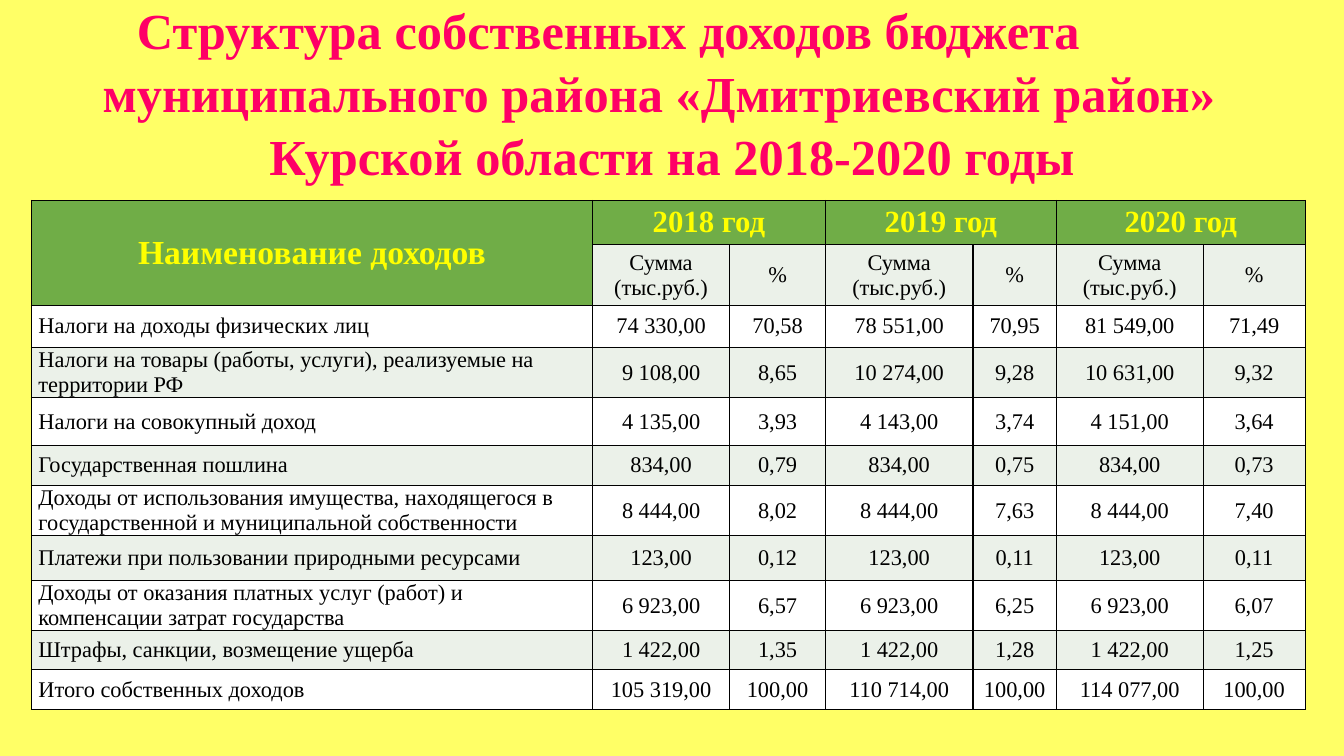
"""Build the slide with the own-revenue structure of the district budget."""
import lxml.etree
import pptx
import pptx.dml.color
import pptx.enum.text
import pptx.oxml
import pptx.oxml.ns
import pptx.util
from pptx.util import Cm

RGBColor = pptx.dml.color.RGBColor
BACKGROUND = RGBColor(0xFF, 0xFF, 0x66)
TITLE_PINK = RGBColor(0xFF, 0x00, 0x66)
HEADER_GREEN = RGBColor(0x70, 0xAD, 0x47)
HEADER_YELLOW = RGBColor(0xFF, 0xFF, 0x00)
BAND = RGBColor(0xEB, 0xF1, 0xE9)
WHITE = RGBColor(0xFF, 0xFF, 0xFF)
BLACK = RGBColor(0x00, 0x00, 0x00)
FONT = "Times New Roman"
CENTER = pptx.enum.text.PP_ALIGN.CENTER
LEFT = pptx.enum.text.PP_ALIGN.LEFT
MIDDLE = pptx.enum.text.MSO_ANCHOR.MIDDLE

TITLE_LINES = [
    ("Структура собственных доходов бюджета", 3.2),
    ("муниципального района «Дмитриевский район»", 0.65),
    ("Курской области на 2018-2020 годы", 0),
]
YEARS = ["2018 год", "2019 год", "2020 год"]
COLUMN_WIDTHS = [14.14, 3.46, 2.41, 3.72, 2.1, 3.7, 2.57]
ROW_HEIGHTS = [1.12, 1.52, 1.06, 1.27, 1.2, 1.01, 1.27, 1.13, 1.26, 0.99, 0.99]
REVENUES = [
    ("Налоги на доходы физических лиц",
     "74 330,00", "70,58", "78 551,00", "70,95", "81 549,00", "71,49"),
    ("Налоги на товары (работы, услуги), реализуемые на территории РФ",
     "9 108,00", "8,65", "10 274,00", "9,28", "10 631,00", "9,32"),
    ("Налоги на совокупный доход",
     "4 135,00", "3,93", "4 143,00", "3,74", "4 151,00", "3,64"),
    ("Государственная пошлина",
     "834,00", "0,79", "834,00", "0,75", "834,00", "0,73"),
    ("Доходы от использования имущества, находящегося в государственной "
     "и муниципальной собственности",
     "8 444,00", "8,02", "8 444,00", "7,63", "8 444,00", "7,40"),
    ("Платежи при пользовании природными ресурсами",
     "123,00", "0,12", "123,00", "0,11", "123,00", "0,11"),
    ("Доходы от оказания платных услуг (работ) и компенсации затрат государства",
     "6 923,00", "6,57", "6 923,00", "6,25", "6 923,00", "6,07"),
    ("Штрафы, санкции, возмещение ущерба",
     "1 422,00", "1,35", "1 422,00", "1,28", "1 422,00", "1,25"),
    ("Итого собственных доходов",
     "105 319,00", "100,00", "110 714,00", "100,00", "114 077,00", "100,00"),
]


def add_line(properties, tag, points):
    """Append a solid black line element to cell or run properties."""
    line = lxml.etree.SubElement(properties, pptx.oxml.ns.qn(tag), w=str(pptx.util.Pt(points)))
    fill = lxml.etree.SubElement(line, pptx.oxml.ns.qn("a:solidFill"))
    lxml.etree.SubElement(fill, pptx.oxml.ns.qn("a:srgbClr"), val=str(BLACK))


def add_run(paragraph, text, size, color, bold=False):
    """Add one formatted run to a paragraph."""
    run = paragraph.add_run()
    run.text = text
    run.font.name = FONT
    run.font.size = pptx.util.Pt(size)
    run.font.bold = bold
    run.font.color.rgb = color
    return run


def fill_title(title):
    """Place the title and write its three centred lines."""
    title.left, title.top, title.width, title.height = Cm(0), Cm(0), Cm(33.87), Cm(4.6)
    frame = title.text_frame
    frame.word_wrap = True
    frame.auto_size = pptx.enum.text.MSO_AUTO_SIZE.NONE
    frame.vertical_anchor = MIDDLE
    for index, (text, right_indent) in enumerate(TITLE_LINES):
        paragraph = frame.add_paragraph() if index else frame.paragraphs[0]
        paragraph.alignment = CENTER
        paragraph.line_spacing = 1.04
        run = paragraph.add_run()
        add_line(run.font._element, "a:ln", 0.75)
        run.text = text
        run.font.name = FONT
        run.font.size = pptx.util.Pt(36)
        run.font.bold = True
        run.font.color.rgb = TITLE_PINK
        paragraph._p.get_or_add_pPr().set("marR", str(Cm(right_indent)))


def style_cell(cell, fill):
    """Give a cell its borders, fill and vertical anchor."""
    properties = cell._tc.get_or_add_tcPr()
    for side in "LRTB":
        add_line(properties, f"a:ln{side}", 1)
    cell.fill.solid()
    cell.fill.fore_color.rgb = fill
    cell.vertical_anchor = MIDDLE


def write_cell(cell, text, size=16, color=BLACK, bold=False, alignment=CENTER):
    """Write the only paragraph of a cell."""
    paragraph = cell.text_frame.paragraphs[0]
    paragraph.alignment = alignment
    add_run(paragraph, text, size, color, bold)


def fill_header(table):
    """Merge and write the two header rows."""
    table.cell(0, 0).merge(table.cell(1, 0))
    write_cell(table.cell(0, 0), "Наименование доходов", 24, HEADER_YELLOW, True)
    for index, year in enumerate(YEARS):
        column = 1 + 2 * index
        table.cell(0, column).merge(table.cell(0, column + 1))
        write_cell(table.cell(0, column), year, 22, HEADER_YELLOW, True)
        write_cell(table.cell(1, column), "Сумма (тыс.руб.)")
        write_cell(table.cell(1, column + 1), "%")


def fill_revenues(table):
    """Write the revenue rows under the header."""
    for row, values in enumerate(REVENUES, start=2):
        for column, value in enumerate(values):
            cell = table.cell(row, column)
            cell.margin_left = cell.margin_right = Cm(0.18)
            cell.margin_top = cell.margin_bottom = Cm(0)
            write_cell(cell, value, alignment=CENTER if column else LEFT)


def add_revenue_table(slide):
    """Add the revenue table with its sizes, fills and content."""
    table = slide.shapes.add_table(
        len(ROW_HEIGHTS), len(COLUMN_WIDTHS), Cm(0.79), Cm(5.05),
        Cm(sum(COLUMN_WIDTHS)), Cm(sum(ROW_HEIGHTS))).table
    for column, width in zip(table.columns, COLUMN_WIDTHS):
        column.width = Cm(width)
    for row_index, height in enumerate(ROW_HEIGHTS):
        table.rows[row_index].height = Cm(height)
        for column_index, cell in enumerate(table.rows[row_index].cells):
            is_header = row_index == 0 or (row_index == 1 and column_index == 0)
            style_cell(cell, HEADER_GREEN if is_header else BAND if row_index % 2 else WHITE)
    fill_header(table)
    fill_revenues(table)


def main():
    """Build and save the presentation."""
    presentation = pptx.Presentation()
    presentation.slide_width = Cm(33.87)
    presentation.slide_height = Cm(19.05)
    slide = presentation.slides.add_slide(presentation.slide_layouts[5])
    slide.background.fill.solid()
    slide.background.fill.fore_color.rgb = BACKGROUND
    fill_title(slide.shapes.title)
    add_revenue_table(slide)
    presentation.save("out.pptx")


if __name__ == "__main__":
    main()
